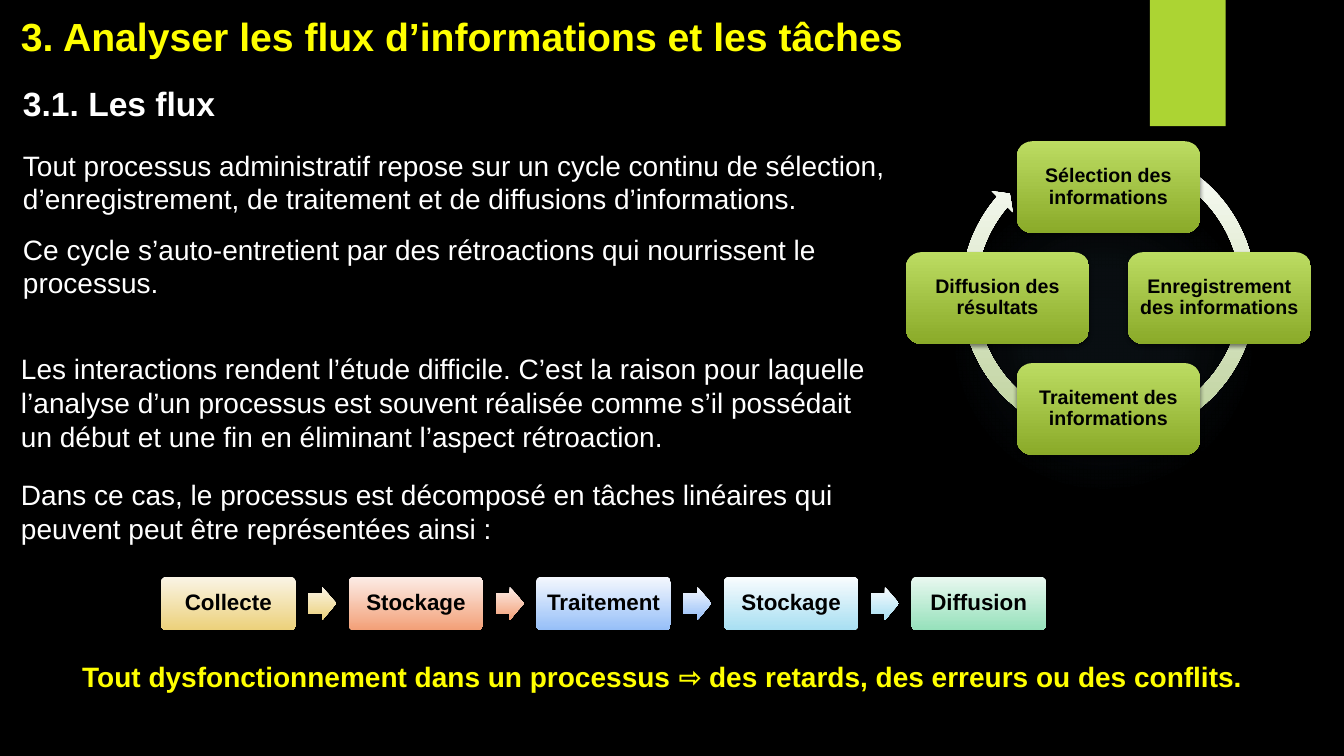
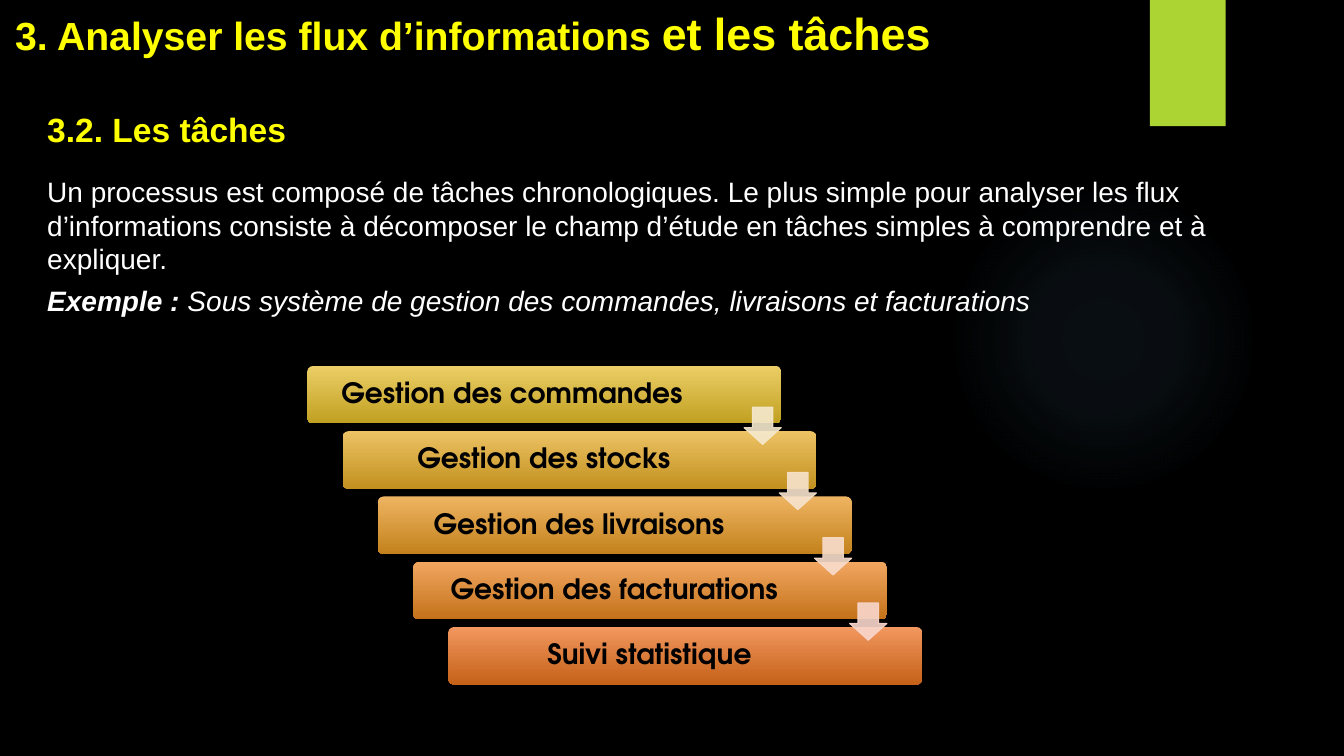
from dataclasses import dataclass
from typing import NamedTuple

from lxml import etree
from pptx import Presentation
from pptx.dml.color import RGBColor
from pptx.enum.shapes import MSO_SHAPE
from pptx.enum.text import MSO_ANCHOR, PP_ALIGN
from pptx.oxml import parse_xml
from pptx.oxml.ns import nsdecls, qn
from pptx.util import Cm, Pt

RECT = MSO_SHAPE.RECTANGLE
ROUNDED = MSO_SHAPE.ROUNDED_RECTANGLE
ELLIPSE = MSO_SHAPE.OVAL
RIGHT_ARROW = MSO_SHAPE.RIGHT_ARROW
DOWN_ARROW = MSO_SHAPE.DOWN_ARROW
CIRCULAR_ARROW = MSO_SHAPE.CIRCULAR_ARROW
TOP, MIDDLE, BOTTOM = MSO_ANCHOR.TOP, MSO_ANCHOR.MIDDLE, MSO_ANCHOR.BOTTOM
LEFT, CENTER = PP_ALIGN.LEFT, PP_ALIGN.CENTER


@dataclass(frozen=True)
class Theme:
    background: str = "000000"
    text: str = "FFFFFF"
    accent: str = "FFFF00"
    label: str = "000000"
    tag: str = "ACD433"
    glow: str = "7AC4F0"
    cycle_box: tuple = ("BCDC62", "8AAA29")
    cycle_arrow: tuple = ("FEFFFE", "BACF96")
    font: str = "Arial"
    cascade_font: str = "TeX Gyre Adventor"
    title_size: int = 28
    title_large: int = 32
    heading_size: int = 24
    body_size: int = 20
    chain_size: int = 16
    cycle_size: int = 14


THEME = Theme()


class Box(NamedTuple):
    left: float
    top: float
    width: float
    height: float

    def lengths(self):
        return [Cm(value) for value in self]


@dataclass
class Run:
    text: str
    size: int = THEME.body_size
    color: str = THEME.text
    bold: bool = False
    italic: bool = False
    font: str = THEME.font


@dataclass
class Para:
    runs: list
    before: int = 0
    after: int = 0
    align: int = LEFT
    spacing: float = 1.0


def rgb(value):
    return RGBColor.from_string(value)


def write_text(frame, paras, anchor=TOP):
    frame.word_wrap = True
    frame.vertical_anchor = anchor
    for index, para in enumerate(paras):
        paragraph = frame.paragraphs[0] if index == 0 else frame.add_paragraph()
        paragraph.alignment = para.align
        paragraph.line_spacing = para.spacing
        paragraph.space_before = Pt(para.before)
        paragraph.space_after = Pt(para.after)
        for part in para.runs:
            run = paragraph.add_run()
            run.text = part.text
            run.font.name = part.font
            run.font.size = Pt(part.size)
            run.font.bold = part.bold
            run.font.italic = part.italic
            run.font.color.rgb = rgb(part.color)


def add_text(slide, box, paras, anchor=TOP):
    write_text(slide.shapes.add_textbox(*box.lengths()).text_frame, paras, anchor)


def add_figure(slide, kind, box, fill, adjustments=(), shadow=False):
    figure = slide.shapes.add_shape(kind, *box.lengths())
    for index, value in enumerate(adjustments):
        figure.adjustments[index] = value
    figure.shadow.inherit = False
    figure.line.fill.background()
    if isinstance(fill, tuple):
        figure.fill.gradient()
        figure.fill.gradient_angle = 270
        for stop, color in zip(figure.fill.gradient_stops, fill):
            stop.color.rgb = rgb(color)
    else:
        figure.fill.solid()
        figure.fill.fore_color.rgb = rgb(fill)
    if shadow:
        figure._element.spPr.find(qn("a:effectLst")).append(parse_xml(
            f'<a:outerShdw {nsdecls("a")} blurRad="38100" dist="25400" dir="5400000" '
            'rotWithShape="0"><a:srgbClr val="000000"><a:alpha val="45000"/>'
            '</a:srgbClr></a:outerShdw>'))
    return figure


def add_label(figure, text, size, inset, right_inset=None, font=THEME.font):
    frame = figure.text_frame
    frame.margin_left = frame.margin_top = frame.margin_bottom = Cm(inset)
    frame.margin_right = Cm(inset if right_inset is None else right_inset)
    run = Run(text, size, THEME.label, True, font=font)
    write_text(frame, [Para([run], align=CENTER, spacing=0.9)], MIDDLE)


def add_backdrop(slide):
    glow = add_figure(slide, ELLIPSE, Box(23.9, 4.65, 7.82, 7.82), THEME.glow)
    stops = "".join(
        f'<a:gs pos="{pos}000"><a:srgbClr val="{THEME.glow}">'
        f'<a:alpha val="{alpha}000"/></a:srgbClr></a:gs>'
        for pos, alpha in ((0, 7), (36, 6), (69, 0)))
    properties = glow._element.spPr
    properties.replace(properties.find(qn("a:solidFill")), parse_xml(
        f'<a:gradFill {nsdecls("a")}><a:gsLst>{stops}</a:gsLst><a:path path="circle">'
        '<a:fillToRect l="50000" t="50000" r="50000" b="50000"/></a:path></a:gradFill>'))
    add_figure(slide, RECT, Box(28.98, 0, 1.91, 3.18), THEME.tag, shadow=True)


def add_title(slide, left, parts):
    runs = [Run(text, size, THEME.accent, True) for text, size in parts]
    add_text(slide, Box(left, 0.36, 27.56, 1.27), [Para(runs)], BOTTOM)


def add_cycle(slide, area, labels):
    box_width, box_height, ring = 4.62, 2.31, 7.8
    free_x, free_y = area.width - box_width, area.height - box_height
    ring_box = Box(area.left + (area.width - ring) / 2,
                   area.top + (area.height - ring) / 2 - 0.13, ring, ring)
    add_figure(slide, CIRCULAR_ARROW, ring_box, THEME.cycle_arrow,
               (0.047, 2.729, 132.38, 177.602, 0.048))
    places = ((0.5, 0), (1, 0.5), (0.5, 1), (0, 0.5))
    for label, (x, y) in zip(labels, places):
        box = Box(area.left + x * free_x, area.top + y * free_y, box_width, box_height)
        stage = add_figure(slide, ROUNDED, box, THEME.cycle_box, shadow=True)
        add_label(stage, label, THEME.cycle_size, 0.15)


def add_chain(slide, area, tasks):
    task_width, arrow_width, arrow_height = 3.39, 0.71, 0.84
    pitch = (area.width - task_width) / (len(tasks) - 1)
    arrow_offset = (task_width + pitch - arrow_width) / 2
    for index, (label, colors) in enumerate(tasks):
        left = area.left + index * pitch
        task = add_figure(slide, ROUNDED, Box(left, area.top, task_width, area.height),
                          colors, (0.1,))
        add_label(task, label, THEME.chain_size, 0.17)
        if index < len(tasks) - 1:
            arrow_top = area.top + (area.height - arrow_height) / 2
            add_figure(slide, RIGHT_ARROW,
                       Box(left + arrow_offset, arrow_top, arrow_width, arrow_height),
                       colors, (0.6, 0.5))


def add_cascade(slide, area, steps, arrow_colors):
    bar_width, bar_height, arrow_size = 11.94, 1.45, 0.94
    shift_x = (area.width - bar_width) / (len(steps) - 1)
    shift_y = (area.height - bar_height) / (len(steps) - 1)
    for index, (label, colors) in enumerate(steps):
        box = Box(area.left + index * shift_x, area.top + index * shift_y,
                  bar_width, bar_height)
        bar = add_figure(slide, ROUNDED, box, colors, (0.1,), shadow=True)
        add_label(bar, label, THEME.body_size, 0.2, 2.0 if index else 1.83,
                  THEME.cascade_font)
    for index, color in enumerate(arrow_colors):
        box = Box(area.left + index * shift_x + bar_width - arrow_size,
                  area.top + index * shift_y + 1.04, arrow_size, arrow_size)
        arrow = add_figure(slide, DOWN_ARROW, box, color, (0.55, 0.45))
        arrow.line.color.rgb = rgb(color)
        arrow.line.width = Pt(0.75)
        for paint in arrow._element.spPr.iter(qn("a:srgbClr")):
            etree.SubElement(paint, qn("a:alpha")).set("val", "90000")


def build_flows(slide):
    add_backdrop(slide)
    add_title(slide, 0.28, [
        ("3. Analyser les flux d’informations et les tâches", THEME.title_size)])
    add_text(slide, Box(0.33, 1.96, 23.37, 5.77), [
        Para([Run("3.1. Les flux", THEME.heading_size, bold=True)]),
        Para([Run("Tout processus administratif repose sur un cycle continu de sélection, "
                  "d’enregistrement, de traitement et de diffusions d’informations.")], 18, 6),
        Para([Run("Ce cycle s’auto-entretient par des rétroactions qui nourrissent le "
                  "processus.")], 6, 6)])
    add_cycle(slide, Box(22.83, 3.56, 10.21, 7.9), (
        "Sélection des informations", "Enregistrement des informations",
        "Traitement des informations", "Diffusion des résultats"))
    add_text(slide, Box(0.28, 8.74, 22.33, 5.18), [
        Para([Run("Les interactions rendent l’étude difficile. C’est la raison pour laquelle "
                  "l’analyse d’un processus est souvent réalisée comme s’il possédait un début "
                  "et une fin en éliminant l’aspect rétroaction.")], 0, 6),
        Para([Run("Dans ce cas, le processus est décomposé en tâches linéaires qui peuvent "
                  "peut être représentées ainsi :")], 12, 6)])
    add_chain(slide, Box(4.06, 14.53, 22.3, 1.35), (
        ("Collecte", ("FAF4E5", "ECD17B")),
        ("Stockage", ("FCEDE7", "F3A078")),
        ("Traitement", ("F5F8FE", "96BFF8")),
        ("Stockage", ("F9FCFE", "A8DFF2")),
        ("Diffusion", ("E9F8F0", "96E1BB"))))
    add_text(slide, Box(0.43, 16.48, 32.54, 1.12), [
        Para([Run("Tout dysfonctionnement dans un processus ⇨ des retards, des erreurs ou "
                  "des conflits.", color=THEME.accent, bold=True)], align=CENTER)], MIDDLE)


def build_tasks(slide):
    add_backdrop(slide)
    add_text(slide, Box(0.94, 2.62, 31.5, 5.6), [
        Para([Run("3.2. Les tâches", THEME.heading_size, THEME.accent, True)]),
        Para([Run("Un processus est composé de tâches chronologiques. Le plus simple pour "
                  "analyser les flux d’informations consiste à décomposer le champ d’étude en "
                  "tâches simples à comprendre et à expliquer.")], 18),
        Para([Run("Exemple : ", bold=True, italic=True),
              Run("Sous système de gestion des commandes, livraisons et facturations",
                  italic=True)], 6)])
    add_cascade(slide, Box(7.75, 9.22, 15.49, 8.03), (
        ("Gestion des commandes", ("EBCE66", "C1A021")),
        ("Gestion des stocks", ("EDC264", "C2911F")),
        ("Gestion des livraisons", ("EFB462", "C3821C")),
        ("Gestion des facturations", ("F1A660", "C4721A")),
        ("Suivi statistique", ("F2975F", "C56118"))),
        ("F5E9CE", "F7E3CD", "F8DDCD", "F9D7CD"))
    add_title(slide, 0.13, [
        ("3. Analyser les flux d’informations ", THEME.title_size),
        ("et les tâches", THEME.title_large)])


def main():
    deck = Presentation()
    deck.slide_width, deck.slide_height = Cm(33.87), Cm(19.05)
    backdrop = deck.slide_master.background.fill
    backdrop.solid()
    backdrop.fore_color.rgb = rgb(THEME.background)
    blank = deck.slide_layouts[6]
    for build in (build_flows, build_tasks):
        build(deck.slides.add_slide(blank))
    deck.save("out.pptx")


if __name__ == "__main__":
    main()
